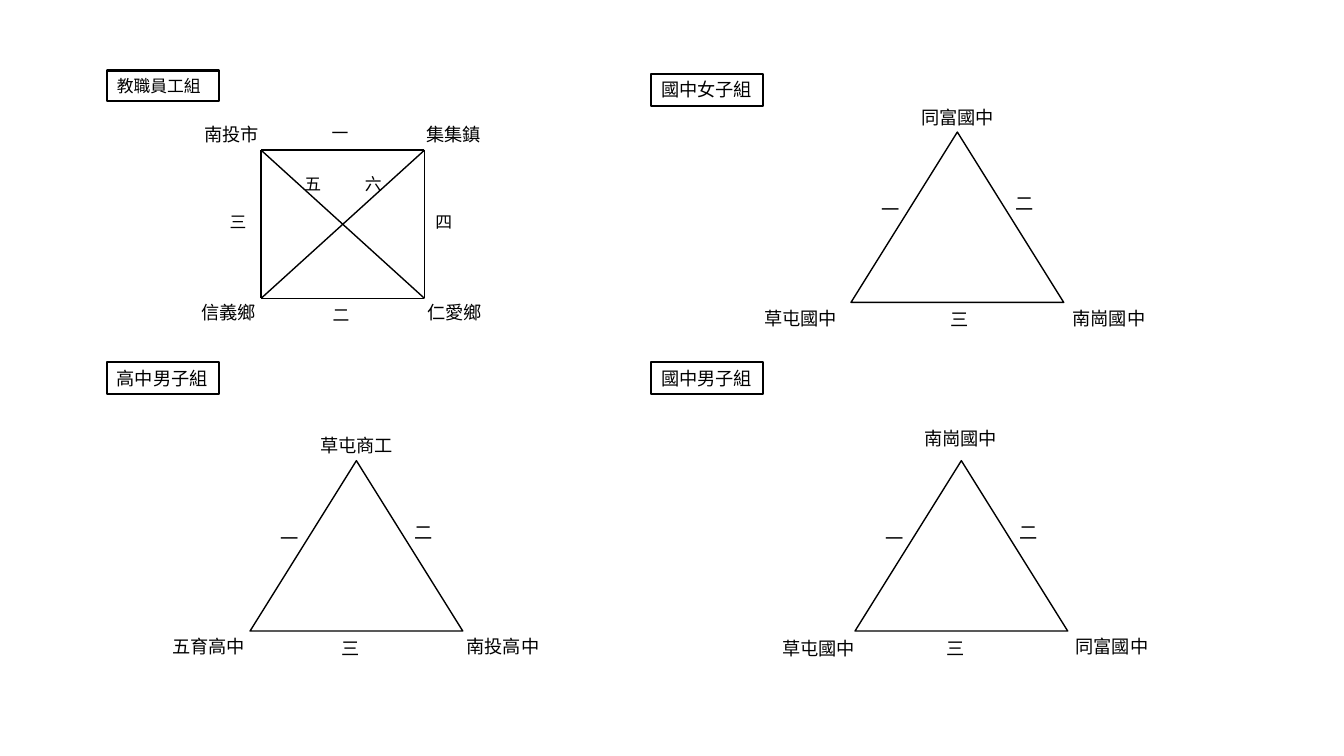
from lxml import etree
from pptx import Presentation
from pptx.dml.color import RGBColor
from pptx.enum.shapes import MSO_CONNECTOR, MSO_SHAPE
from pptx.enum.text import MSO_ANCHOR, MSO_AUTO_SIZE, PP_ALIGN
from pptx.oxml.ns import qn
from pptx.util import Inches, Pt

STRAIGHT = MSO_CONNECTOR.STRAIGHT
RECT, TRIANGLE = MSO_SHAPE.RECTANGLE, MSO_SHAPE.ISOSCELES_TRIANGLE
TOP, LEFT = MSO_ANCHOR.TOP, PP_ALIGN.LEFT
GROW = MSO_AUTO_SIZE.SHAPE_TO_FIT_TEXT

COLORS = {"ink": "000000"}
FONT = "Noto Sans CJK SC"
FRAME = {"word_wrap": True, "auto_size": GROW, "vertical_anchor": TOP,
         "margin_left": Inches(0.1), "margin_right": 0,
         "margin_top": Inches(0.05), "margin_bottom": Inches(0.05)}

TRI_W, TRI_H = 2.11, 1.69
SQ_LEFT, SQ_TOP, SQ_RIGHT, SQ_BOTTOM = 2.59, 1.49, 4.21, 2.96

# Group title, its box, and its text size
TITLES = [
    ("教職員工組", 1.06, 0.7, 0.3, 12),
    ("國中女子組", 6.46, 0.73, 0.32, 13),
    ("高中男子組", 1.06, 3.59, 0.32, 13),
    ("國中男子組", 6.46, 3.59, 0.32, 13),
]
SQUARE_TEAMS = [("南投市", 1.93, 1.17), ("集集鎮", 4.13, 1.17),
                ("信義鄉", 1.9, 2.94), ("仁愛鄉", 4.14, 2.94)]
SQUARE_MATCHES = [("一", 3.19, 1.17), ("二", 3.2, 2.97), ("三", 2.18, 2.05),
                  ("四", 4.22, 2.05), ("五", 2.92, 1.67), ("六", 3.52, 1.67)]
# Triangle corner, offset of match three, and the teams around it
TRIANGLES = [
    (8.44, 1.31, 0.89, [("同富國中", 9.04, 1.01), ("草屯國中", 7.48, 3),
                        ("南崗國中", 10.54, 3)]),
    (2.48, 4.57, 0.81, [("草屯商工", 3.08, 4.26), ("五育高中", 1.61, 6.25),
                        ("南投高中", 4.53, 6.25)]),
    (8.48, 4.57, 0.81, [("南崗國中", 9.07, 4.19), ("草屯國中", 7.66, 6.27),
                        ("同富國中", 10.57, 6.25)]),
]


class Bracket:
    """Draws the elements of a tournament bracket on one slide."""

    def __init__(self, slide):
        self.shapes = slide.shapes
        self.ink = RGBColor.from_string(COLORS["ink"])

    def add_text(self, sp, text, size):
        tf = sp.text_frame
        for name, value in FRAME.items():
            setattr(tf, name, value)
        p = tf.paragraphs[0]
        p.alignment = LEFT
        r = p.add_run()
        r.text = text
        for name, value in {"name": FONT, "size": Pt(size)}.items():
            setattr(r.font, name, value)
        r.font.color.rgb = self.ink
        etree.SubElement(r.font._element, qn("a:ea")).set("typeface", FONT)

    def label(self, text, x, y, w, h=0.32, size=13):
        sp = self.shapes.add_textbox(Inches(x), Inches(y), Inches(w), Inches(h))
        self.add_text(sp, text, size)

    def outline(self, kind, x, y, w, h, weight):
        sp = self.shapes.add_shape(kind, Inches(x), Inches(y), Inches(w), Inches(h))
        sp.shadow.inherit = False
        sp.fill.background()
        sp.line.color.rgb = self.ink
        sp.line.width = Pt(weight)
        return sp

    def title(self, text, x, y, h, size):
        self.add_text(self.outline(RECT, x, y, 1.11, h, 1.5), text, size)

    def line(self, x1, y1, x2, y2):
        cx = self.shapes.add_connector(
            STRAIGHT, Inches(x1), Inches(y1), Inches(x2), Inches(y2))
        cx.line.color.rgb = self.ink
        cx.line.width = Pt(1)
        etree.SubElement(cx._element.spPr, qn("a:effectLst"))

    def square(self):
        """Four teams, each playing every other."""
        for y in (SQ_BOTTOM, SQ_TOP):
            self.line(SQ_LEFT, y, SQ_RIGHT, y)
        for x in (SQ_LEFT, SQ_RIGHT):
            self.line(x, SQ_TOP, x, SQ_BOTTOM)
        self.line(SQ_LEFT, SQ_TOP, SQ_RIGHT, SQ_BOTTOM)
        self.line(SQ_RIGHT, SQ_TOP, SQ_LEFT, SQ_BOTTOM)
        for text, x, y in SQUARE_MATCHES:
            self.label(text, x, y, 0.4, 0.3, 12)
        for text, x, y in SQUARE_TEAMS:
            self.label(text, x, y, 0.77)

    def triangle(self, x, y, third_dx, teams):
        """Three teams, each playing every other."""
        self.outline(TRIANGLE, x, y, TRI_W, TRI_H, 1)
        for text, dx, dy in (("一", 0.2, 0.61), ("二", 1.53, 0.55),
                             ("三", third_dx, 1.7)):
            self.label(text, x + dx, y + dy, 0.4)
        for text, team_x, team_y in teams:
            self.label(text, team_x, team_y, 0.93)


def main():
    prs = Presentation()
    prs.slide_width, prs.slide_height = Inches(13.33), Inches(7.5)
    s = prs.slides.add_slide(prs.slide_layouts[6])
    bracket = Bracket(s)
    for title in TITLES:
        bracket.title(*title)
    bracket.square()
    for group in TRIANGLES:
        bracket.triangle(*group)
    prs.save("out.pptx")


if __name__ == "__main__":
    main()
